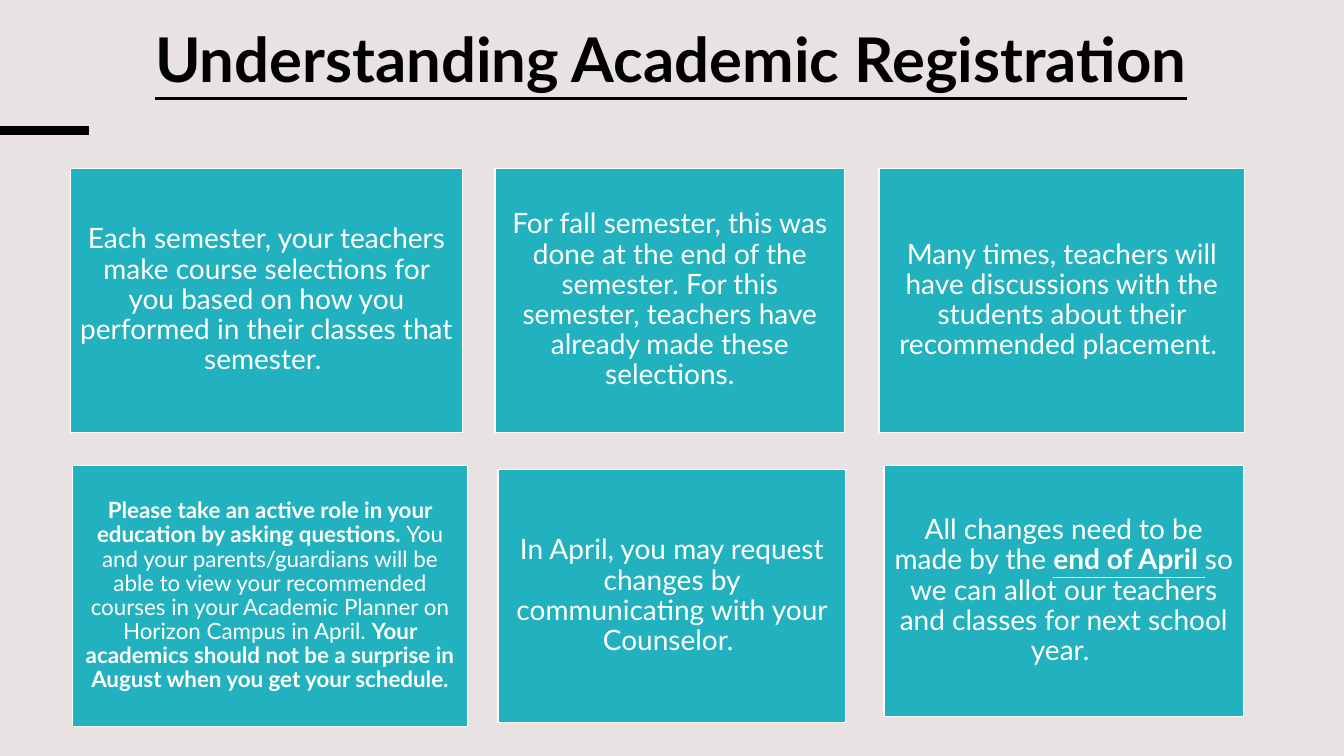
from pptx import Presentation
from pptx.dml.color import RGBColor
from pptx.enum.shapes import MSO_CONNECTOR, MSO_SHAPE
from pptx.enum.text import MSO_ANCHOR, PP_ALIGN
from pptx.oxml.ns import qn
from pptx.util import Pt
from lxml.etree import SubElement

BLACK = RGBColor(0x00, 0x00, 0x00)
WHITE = RGBColor(0xFF, 0xFF, 0xFF)
TEAL = RGBColor(0x22, 0xB1, 0xBE)
BACKGROUND = RGBColor(0xE8, 0xE2, 0xE2)
FONT = "Lato"

PLAIN, BOLD, BOLD_UNDERLINE = (False, False), (True, False), (True, True)

TITLE_BOX = (59.8, 19.4, 839.5, 104.4)
CARDS = [
    ((50.4, 120.2, 280, 188.6), 20, [
        ("Each semester, your teachers make course selections for you based on "
         "how you performed in their classes that semester. ", PLAIN)]),
    ((353.6, 120.2, 249.8, 188.6), 20, [
        ("For fall semester, this was done at the end of the semester. For this "
         "semester, teachers have already made these selections.", PLAIN)]),
    ((627.8, 120.2, 261.4, 188.6), 20, [
        ("Many times, teachers will have discussions with the students about "
         "their recommended placement. ", PLAIN)]),
    ((51.8, 332.6, 282.2, 186.4), 16, [
        ("Please take an active role in your education by asking questions. ", BOLD),
        ("You and your parents/guardians will be able to view your recommended "
         "courses in your Academic Planner on Horizon Campus in April. ", PLAIN),
        ("Your academics should not be a surprise in August when you get your "
         "schedule.", BOLD)]),
    ((355.7, 335.5, 248.4, 180.7), 20, [
        ("In April, you may request changes by communicating with your "
         "Counselor. ", PLAIN)]),
    ((631.4, 332.6, 257, 179.3), 20, [
        ("All changes need to be made by the ", PLAIN),
        ("end of April ", BOLD_UNDERLINE),
        ("so we can allot our teachers and classes for next school year. ", PLAIN)]),
]


def add_run(p, text, size, color, style):
    r = p.add_run()
    r.text = text
    r.font.name = FONT
    r.font.size = Pt(size)
    r.font.color.rgb = color
    r.font.bold, r.font.underline = style


def add_accent(slide, x, y, length):
    line = slide.shapes.add_connector(
        MSO_CONNECTOR.STRAIGHT, Pt(x), Pt(y), Pt(x + length), Pt(y))
    line.line.color.rgb = BLACK
    line.line.width = Pt(6.75)
    SubElement(line._element.spPr, qn("a:effectLst"))


def add_title(slide, box, text):
    tf = slide.shapes.add_textbox(*map(Pt, box)).text_frame
    tf.word_wrap = True
    p = tf.paragraphs[0]
    p.alignment = PP_ALIGN.CENTER
    p.line_spacing = 0.85
    add_run(p, text, 44, BLACK, BOLD_UNDERLINE)


def add_card(slide, box, size, runs):
    sp = slide.shapes.add_shape(MSO_SHAPE.RECTANGLE, *map(Pt, box))
    sp.shadow.inherit = False
    sp.fill.solid()
    sp.fill.fore_color.rgb = TEAL
    sp.line.color.rgb = WHITE
    sp.line.width = Pt(1)
    tf = sp.text_frame
    tf.word_wrap = True
    tf.vertical_anchor = MSO_ANCHOR.MIDDLE
    inset = Pt(size * 0.3)
    tf.margin_left = tf.margin_top = tf.margin_right = tf.margin_bottom = inset
    p = tf.paragraphs[0]
    p.alignment = PP_ALIGN.CENTER
    p.line_spacing = 0.9
    p.space_after = Pt(size * 0.35)
    for text, style in runs:
        add_run(p, text, size, WHITE, style)


def main():
    prs = Presentation()
    prs.slide_width, prs.slide_height = Pt(960), Pt(540)
    slide = prs.slides.add_slide(prs.slide_layouts[6])
    slide.background.fill.solid()
    slide.background.fill.fore_color.rgb = BACKGROUND
    add_accent(slide, 0, 93.4, 63.4)
    add_title(slide, TITLE_BOX, "Understanding Academic Registration")
    for box, size, runs in CARDS:
        add_card(slide, box, size, runs)
    prs.save("out.pptx")


if __name__ == "__main__":
    main()
